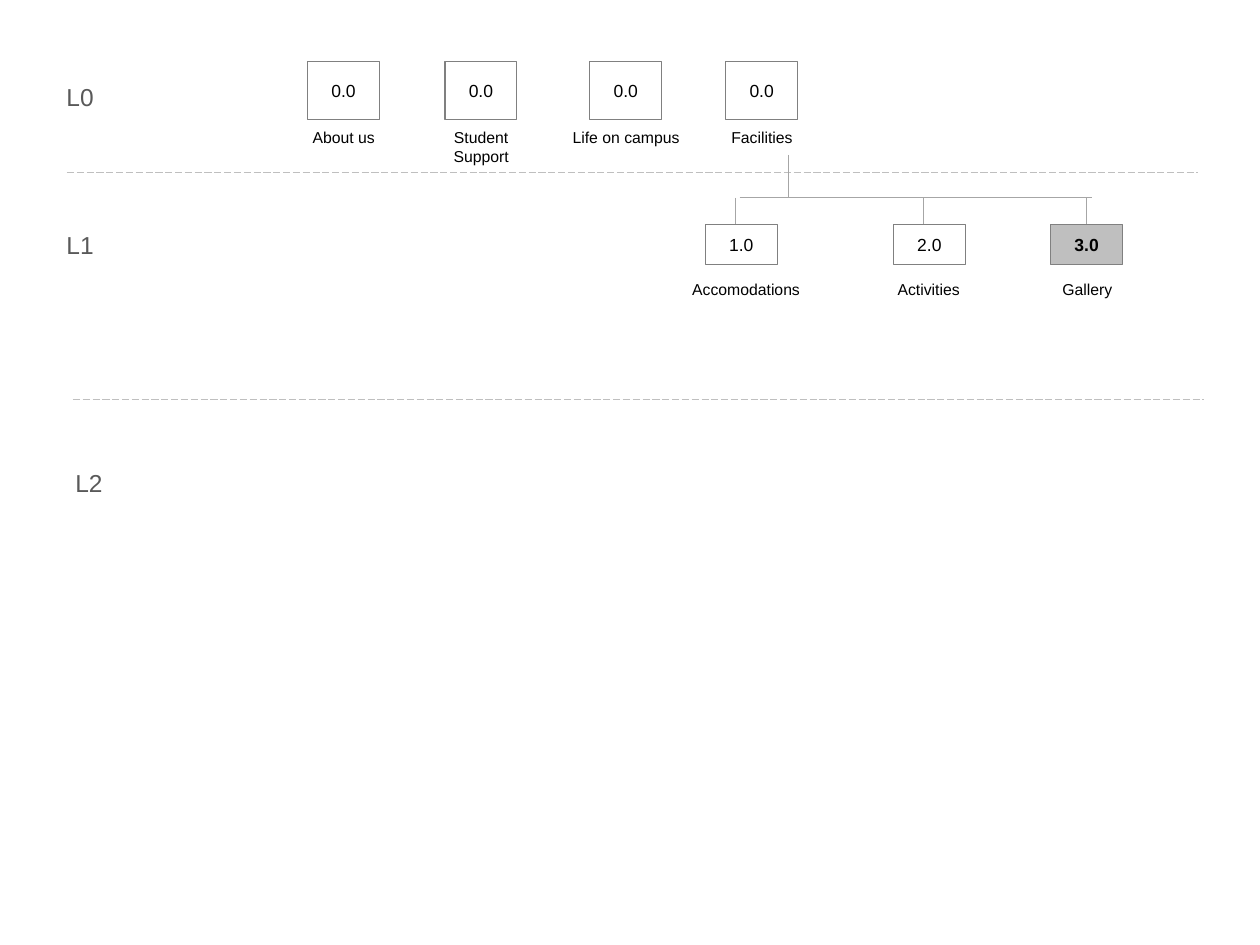
from dataclasses import dataclass

from lxml import etree
from pptx import Presentation
from pptx import util as u
from pptx.dml.color import RGBColor
from pptx.enum import dml, shapes, text
from pptx.oxml import ns


@dataclass(frozen=True)
class Theme:
    font: str = "Arial"
    ink: RGBColor = RGBColor(0x00, 0x00, 0x00)
    level: RGBColor = RGBColor(0x59, 0x59, 0x59)
    border: RGBColor = RGBColor(0x80, 0x80, 0x80)
    branch: RGBColor = RGBColor(0xA6, 0xA6, 0xA6)
    grey: RGBColor = RGBColor(0xBF, 0xBF, 0xBF)
    level_size: u.Pt = u.Pt(14)
    number_size: u.Pt = u.Pt(10)
    label_size: u.Pt = u.Pt(9)


theme = Theme()
prs = Presentation()
prs.slide_width, prs.slide_height = u.Cm(25.4), u.Cm(19.05)
s = prs.slides.add_slide(prs.slide_layouts[6])


def write(sp, words, size, color, align, bold=False):
    tf = sp.text_frame
    tf.word_wrap = True
    p = tf.paragraphs[0]
    p.text = words
    p.alignment = align
    p.font.name, p.font.size, p.font.bold = theme.font, size, bold
    p.font.color.rgb = color


def line(x1, y1, x2, y2, color):
    c = s.shapes.add_connector(
        shapes.MSO_CONNECTOR.STRAIGHT, u.Cm(x1), u.Cm(y1), u.Cm(x2), u.Cm(y2))
    c.line.color.rgb, c.line.width = color, u.Pt(0.5)
    etree.SubElement(c._element.spPr, ns.qn("a:effectLst"))
    return c


# Level names
for words, x, y in (("L0", 1.09, 1.52), ("L1", 1.09, 4.52), ("L2", 1.27, 9.32)):
    sp = s.shapes.add_textbox(u.Cm(x), u.Cm(y), u.Cm(1.83), u.Cm(0.86))
    write(sp, words, theme.level_size, theme.level, text.PP_ALIGN.LEFT)

# Dashed dividers between levels
for x, y in ((1.35, 3.48), (1.47, 8.05)):
    divider = line(x, y, x + 22.81, y, theme.grey)
    divider.line.dash_style = dml.MSO_LINE.LONG_DASH

# Pages: number, label, box left, label centre, label width, label height
box_w = 1.45
levels = (
    # box top, box height, label top, pages
    (1.24, 1.17, 2.46, (
        ("0.0", "About us", 6.2, 6.93, 3.05, 0.64),
        ("0.0", "Student Support", 8.97, 9.7, 2.44, 1.02),
        ("0.0", "Life on campus", 11.89, 12.62, 3.05, 0.64),
        ("0.0", "Facilities", 14.63, 15.36, 2.44, 0.64))),
    (4.52, 0.81, 5.51, (
        ("1.0", "Accomodations", 14.22, 15.04, 3, 0.64),
        ("2.0", "Activities", 18.01, 18.72, 2.74, 0.64),
        ("3.0", "Gallery", 21.18, 21.92, 2.74, 0.64))),
)
boxes = {}
for top, box_h, label_top, pages in levels:
    for number, label, left, centre, label_w, label_h in pages:
        current = label == "Gallery"
        sp = s.shapes.add_shape(shapes.MSO_SHAPE.RECTANGLE, u.Cm(left), u.Cm(top),
                                u.Cm(box_w), u.Cm(box_h))
        sp.shadow.inherit = False
        sp.line.color.rgb, sp.line.width = theme.border, u.Pt(0)
        if current:
            sp.fill.solid()
            sp.fill.fore_color.rgb = theme.grey
        else:
            sp.fill.background()
        sp.text_frame.vertical_anchor = text.MSO_ANCHOR.MIDDLE
        write(sp, number, theme.number_size, theme.ink, text.PP_ALIGN.CENTER, current)
        boxes[label] = sp

        sp = s.shapes.add_textbox(u.Cm(centre - label_w / 2), u.Cm(label_top),
                                  u.Cm(label_w), u.Cm(label_h))
        write(sp, label, theme.label_size, theme.ink, text.PP_ALIGN.CENTER)

# Branch from Facilities down to its three pages
bus_y, pages_y = 3.99, 4.52
line(15.9, 3.12, 15.9, bus_y, theme.branch)
line(14.91, bus_y, 22.02, bus_y, theme.branch)
for x in (14.83, 18.62):
    line(x, bus_y, x, pages_y, theme.branch)
drop = line(21.9, bus_y, 21.9, pages_y, theme.branch)
drop.end_connect(boxes["Gallery"], 0)
drop.begin_x = drop.end_x

prs.save("out.pptx")
